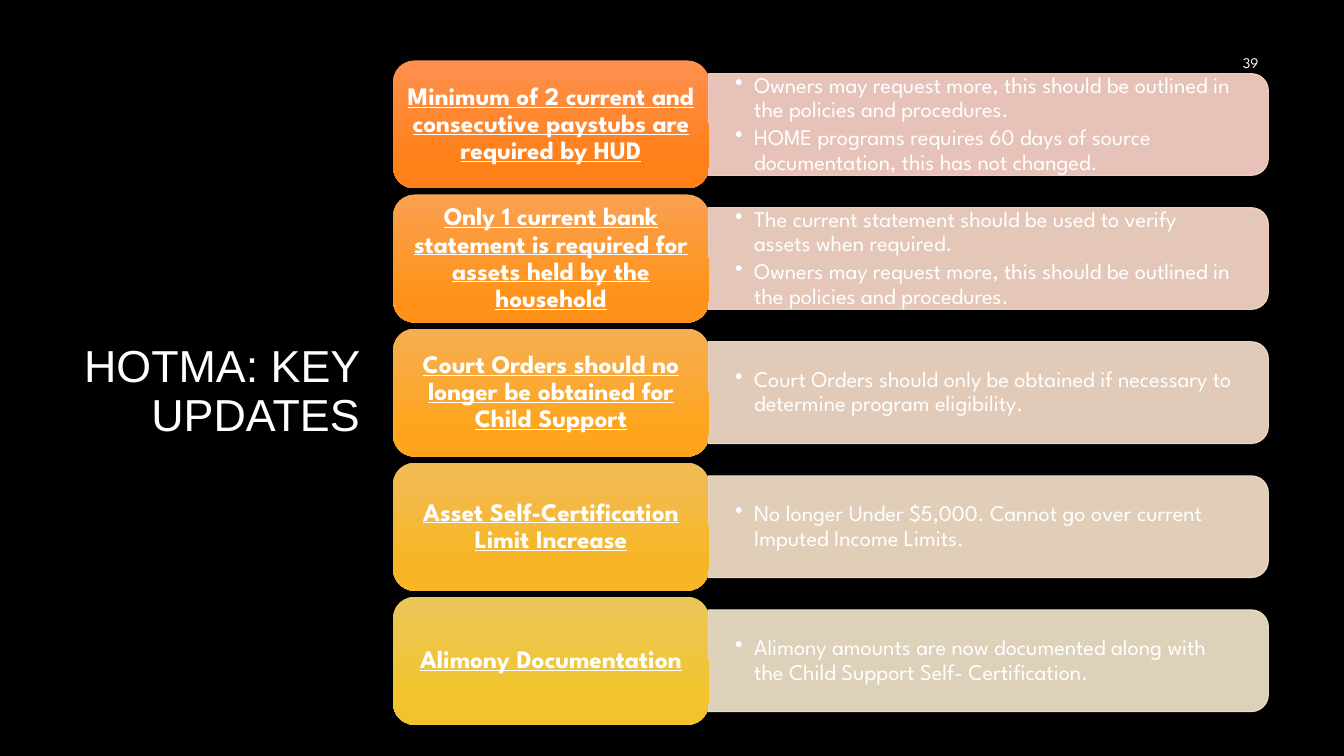
from dataclasses import dataclass

from lxml import etree
from pptx import Presentation
from pptx.dml.color import RGBColor
from pptx.enum.shapes import MSO_SHAPE as Shape
from pptx.enum.text import MSO_ANCHOR as Anchor, MSO_AUTO_SIZE as AutoSize, PP_ALIGN as Align
from pptx.oxml.ns import qn
from pptx.util import Inches, Pt

FONT = "League Spartan"
WHITE = "FFFFFF"
ROW_TOP, ROW_PITCH = 0.6, 1.33
CARD_LEFT, CARD_W, CARD_H = 3.9, 3.13, 1.27
PANEL_LEFT, PANEL_W, PANEL_H = 7.02, 5.56, 1.01


@dataclass
class Update:
    heading: str
    details: list[str]
    top_color: str
    bottom_color: str
    panel_color: str


UPDATES = [
    Update("Minimum of 2 current and consecutive paystubs are required by HUD",
           ["Owners may request more, this should be outlined in the policies and procedures.",
            "HOME programs requires 60 days of source documentation, this has not changed."],
           "FE904F", "FF8019", "FFD8CD"),
    Update("Only 1 current bank statement is required for assets held by the household",
           ["The current statement should be used to verify assets when required.",
            "Owners may request more, this should be outlined in the policies and procedures."],
           "F9A051", "FF931A", "FDDDCD"),
    Update("Court Orders should no longer be obtained for Child Support",
           ["Court Orders should only be obtained if necessary to determine program eligibility."],
           "F5AE53", "FEA51D", "FBE1CD"),
    Update("Asset Self-Certification Limit Increase",
           ["No longer Under $5,000. Cannot go over current Imputed Income Limits."],
           "F0BB56", "F8B625", "F9E5CD"),
    Update("Alimony Documentation",
           ["Alimony amounts are now documented along with the Child Support Self- Certification."],
           "EBC659", "F2C42C", "F7E8CE"),
]


def rgb(color: str) -> RGBColor:
    return RGBColor.from_string(color)


def set_alpha(parent, percent: int) -> None:
    for clr in parent.iter(qn("a:srgbClr")):
        etree.SubElement(clr, qn("a:alpha")).set("val", str(percent * 1000))


def add_bullet(p) -> None:
    pPr = p._p.get_or_add_pPr()
    pPr.set("marL", str(Inches(0.19)))
    pPr.set("indent", str(-Inches(0.19)))
    etree.SubElement(pPr, qn("a:buChar")).set("char", "•")


def write(sp, lines: list[str], *, size: float, font: str = FONT, align=Align.LEFT,
          inset: tuple[float, float] = (0.1, 0.05), line_spacing: float = 0.9,
          after: float = 0, bold: bool = False, underline: bool = False,
          bullets: bool = False) -> None:
    tf = sp.text_frame
    tf.word_wrap, tf.auto_size = True, AutoSize.NONE
    tf.vertical_anchor = Anchor.MIDDLE
    tf.margin_left = tf.margin_right = Inches(inset[0])
    tf.margin_top = tf.margin_bottom = Inches(inset[1])
    for i, line in enumerate(lines):
        p = tf.paragraphs[0] if i == 0 else tf.add_paragraph()
        p.alignment, p.line_spacing, p.space_after = align, line_spacing, Pt(after)
        if bullets:
            p.level = 1
            add_bullet(p)
        r = p.add_run()
        r.text = line
        r.font.name, r.font.size = font, Pt(size)
        r.font.bold, r.font.underline = bold, underline
        r.font.color.rgb = rgb(WHITE)


def draw_panel(s, update: Update, top: float) -> None:
    # The shape is turned a quarter, so its frame is placed around the panel's centre
    left = PANEL_LEFT + (PANEL_W - PANEL_H) / 2
    frame_top = top + (PANEL_H - PANEL_W) / 2
    sp = s.shapes.add_shape(Shape.ROUND_2_SAME_RECTANGLE, Inches(left), Inches(frame_top),
                            Inches(PANEL_H), Inches(PANEL_W))
    sp.rotation = 90
    sp.shadow.inherit = False
    sp.fill.solid()
    sp.fill.fore_color.rgb = rgb(update.panel_color)
    sp.line.color.rgb = rgb(update.panel_color)
    sp.line.width = Pt(0.75)
    set_alpha(sp._element.spPr, 90)
    box = s.shapes.add_textbox(Inches(PANEL_LEFT), Inches(top + 0.05),
                               Inches(5.51), Inches(0.91))
    write(box, update.details, size=16, inset=(0.27, 0.14), after=3, bullets=True)


def draw_card(s, update: Update, top: float) -> None:
    sp = s.shapes.add_shape(Shape.ROUNDED_RECTANGLE, Inches(CARD_LEFT), Inches(top),
                            Inches(CARD_W), Inches(CARD_H))
    sp.shadow.inherit = False
    sp.line.fill.background()
    sp.fill.gradient()
    sp.fill.gradient_angle = 270
    stops = zip(sp.fill.gradient_stops, (0, 0.78), (update.top_color, update.bottom_color))
    for stop, position, color in stops:
        stop.position = position
        stop.color.rgb = rgb(color)
    write(sp, [update.heading], size=18, align=Align.CENTER, inset=(0.07, 0.04),
          bold=True, underline=True)


def main() -> None:
    prs = Presentation()
    prs.slide_width, prs.slide_height = Inches(13.33), Inches(7.5)
    s = prs.slides.add_slide(prs.slide_layouts[5])
    s.background.fill.solid()
    s.background.fill.fore_color.rgb = rgb("000000")

    # Title and slide number
    title = s.shapes.title
    title.left, title.top = Inches(-0.2), Inches(1.08)
    title.width, title.height = Inches(3.87), Inches(5.63)
    write(title, ["HOTMA: KEY UPDATES"], size=32, font="Arial", align=Align.RIGHT)
    number = s.shapes.add_textbox(Inches(9.58), Inches(0.42), Inches(3), Inches(0.4))
    write(number, ["39"], size=10.5, align=Align.RIGHT, line_spacing=1.0, after=6)

    # One row per update: detail panel, then heading card
    for i, update in enumerate(UPDATES):
        top = ROW_TOP + i * ROW_PITCH
        draw_panel(s, update, top + (CARD_H - PANEL_H) / 2)
        draw_card(s, update, top)

    prs.save("out.pptx")


if __name__ == "__main__":
    main()
